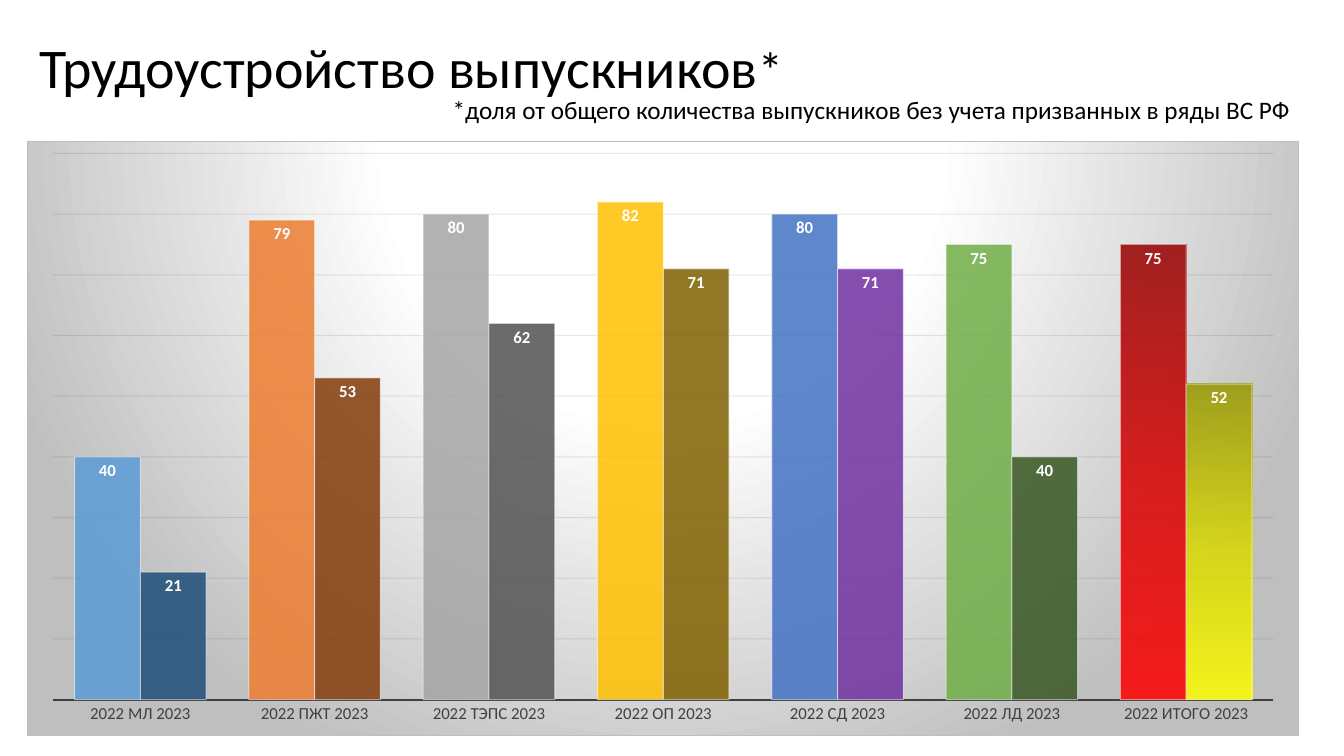
import pptx
import pptx.util
import pptx.chart.data
import pptx.dml.color
import pptx.enum.chart
import pptx.enum.text
import pptx.oxml
import pptx.oxml.ns

Pt = pptx.util.Pt
ALIGN = pptx.enum.text.PP_ALIGN
ANCHOR = pptx.enum.text.MSO_ANCHOR
FONT = "Calibri"
COLORS = {"text": "000000", "axis": "404040", "grid": "0D0D0D",
          "label": "FFFFFF", "border": "BFBFBF"}

TEXTS = [
    ((21, 23, 909, 50), ALIGN.LEFT, [("Трудоустройство выпускников", 40), ("*", 36)]),
    ((221, 67, 707.5, 24), ALIGN.RIGHT,
     [("*доля от общего количества выпускников без учета призванных в ряды ВС РФ", 18)]),
]
GROUPS = ["МЛ", "ПЖТ", "ТЭПС", "ОП", "СД", "ЛД", "ИТОГО"]
SERIES = [
    ("Series 1", [40, 79, 80, 82, 80, 75, 75],
     ["5B9BD5", "ED7D31", "A5A5A5", "FFC000", "4472C4", "70AD47"],
     [(0, "970000"), (50, "D70000"), (100, "FF0000")]),
    ("Series 2", [21, 53, 62, 71, 71, 40, 52],
     ["1F4E79", "843C0B", "525252", "806000", "7030A0", "385723"],
     [(0, "979700"), (50, "D7D700"), (100, "FFFF00")]),
]
BACKDROP = [(0, "FFFFFF"), (39, "FFFFFF"), (100, "BFBFBF")]
CHART_BOX = (19.5, 100.8, 908.6, 424.8)
PLOT = {"x": 0.02, "y": 0.02, "w": 0.96, "h": 0.92}
NS = pptx.oxml.ns.nsdecls("a", "c")


def rgb(value):
    return pptx.dml.color.RGBColor.from_string(value)


def style_font(font, size, color, bold=False):
    font.name, font.size, font.bold = FONT, Pt(size), bold
    font.color.rgb = rgb(color)


def add_alpha(colors, percent):
    for color in colors:
        color.append(pptx.oxml.parse_xml(f'<a:alpha {NS} val="{percent * 1000}"/>'))


def gradient(stops, direction, percent=100):
    listing = "".join(
        f'<a:gs pos="{pos * 1000}"><a:srgbClr val="{color}">'
        f'<a:alpha val="{percent * 1000}"/></a:srgbClr></a:gs>' for pos, color in stops)
    return f'<a:gradFill {NS} rotWithShape="1"><a:gsLst>{listing}</a:gsLst>{direction}</a:gradFill>'


def add_text(s, box, align, runs):
    tf = s.shapes.add_textbox(*map(Pt, box)).text_frame
    tf.word_wrap = True
    tf.vertical_anchor = ANCHOR.TOP
    tf.margin_top = tf.margin_bottom = 0
    p = tf.paragraphs[0]
    p.alignment = align
    for text, size in runs:
        r = p.add_run()
        r.text = text
        style_font(r.font, size, COLORS["text"])


def style_series(series, solids, stops):
    series.invert_if_negative = False
    for i in range(len(GROUPS)):
        fmt = series.points[i].format
        if i < len(solids):
            fmt.fill.solid()
            fmt.fill.fore_color.rgb = rgb(solids[i])
        else:
            fmt.fill.gradient()
        fmt.line.width = Pt(0.75)
        fmt.line.color.rgb = rgb(COLORS["label"])
    element = series._element
    add_alpha(element.xpath("c:dPt/c:spPr/a:solidFill/a:srgbClr"), 85)
    add_alpha(element.xpath("c:dPt/c:spPr/a:ln/a:solidFill/a:srgbClr"), 50)
    for old in element.xpath("c:dPt/c:spPr/a:gradFill"):
        new = gradient(stops, '<a:lin ang="5400000" scaled="0"/>', 85)
        old.getparent().replace(old, pptx.oxml.parse_xml(new))
    labels = series.data_labels
    labels.show_value = True
    labels.position = pptx.enum.chart.XL_LABEL_POSITION.INSIDE_END
    style_font(labels.font, 12, COLORS["label"], True)


def style_axes(chart):
    ticks = pptx.enum.chart.XL_TICK_MARK
    cat, val = chart.category_axis, chart.value_axis
    cat.major_tick_mark = cat.minor_tick_mark = ticks.NONE
    style_font(cat.tick_labels.font, 12, COLORS["axis"])
    cat.format.line.width = Pt(1.5)
    cat.format.line.color.rgb = rgb(COLORS["axis"])
    val.minimum_scale, val.maximum_scale, val.major_unit = 0, 90, 10
    val.has_major_gridlines = True
    val.visible = False
    grid = val.major_gridlines.format.line
    grid.width = Pt(0.75)
    grid.color.rgb = rgb(COLORS["grid"])
    add_alpha(val._element.xpath("c:majorGridlines//a:srgbClr"), 10)


def style_areas(chart):
    fill = gradient(BACKDROP, '<a:path path="circle"><a:fillToRect l="50000" t="-80000" '
                    'r="50000" b="180000"/></a:path>')
    chart._chartSpace.chart.addnext(pptx.oxml.parse_xml(
        f'<c:spPr {NS}>{fill}<a:ln w="9525"><a:solidFill>'
        f'<a:srgbClr val="{COLORS["border"]}"/></a:solidFill></a:ln></c:spPr>'))
    sizes = "".join(f'<c:{key} val="{value}"/>' for key, value in PLOT.items())
    plot_area = chart._chartSpace.chart.plotArea
    for old in plot_area.xpath("c:layout"):
        plot_area.remove(old)
    plot_area.insert(0, pptx.oxml.parse_xml(
        f'<c:layout {NS}><c:manualLayout><c:layoutTarget val="inner"/>'
        f'<c:xMode val="edge"/><c:yMode val="edge"/>{sizes}</c:manualLayout></c:layout>'))


def add_employment_chart(s):
    data = pptx.chart.data.CategoryChartData()
    data.categories = [f"2022 {group} 2023" for group in GROUPS]
    for name, values, _, _ in SERIES:
        data.add_series(name, values)
    kind = pptx.enum.chart.XL_CHART_TYPE.COLUMN_CLUSTERED
    chart = s.shapes.add_chart(kind, *map(Pt, CHART_BOX), data).chart
    chart.has_legend = chart.has_title = False
    style_font(chart.font, 10, COLORS["text"])
    plot = chart.plots[0]
    plot.gap_width, plot.overlap, plot.vary_by_categories = 65, 0, False
    for series, (_, _, solids, stops) in zip(plot.series, SERIES):
        style_series(series, solids, stops)
    style_axes(chart)
    style_areas(chart)


def main():
    prs = pptx.Presentation()
    prs.slide_width, prs.slide_height = Pt(960), Pt(540)
    s = prs.slides.add_slide(prs.slide_layouts[6])
    for box, align, runs in TEXTS:
        add_text(s, box, align, runs)
    add_employment_chart(s)
    prs.save("out.pptx")


if __name__ == "__main__":
    main()
